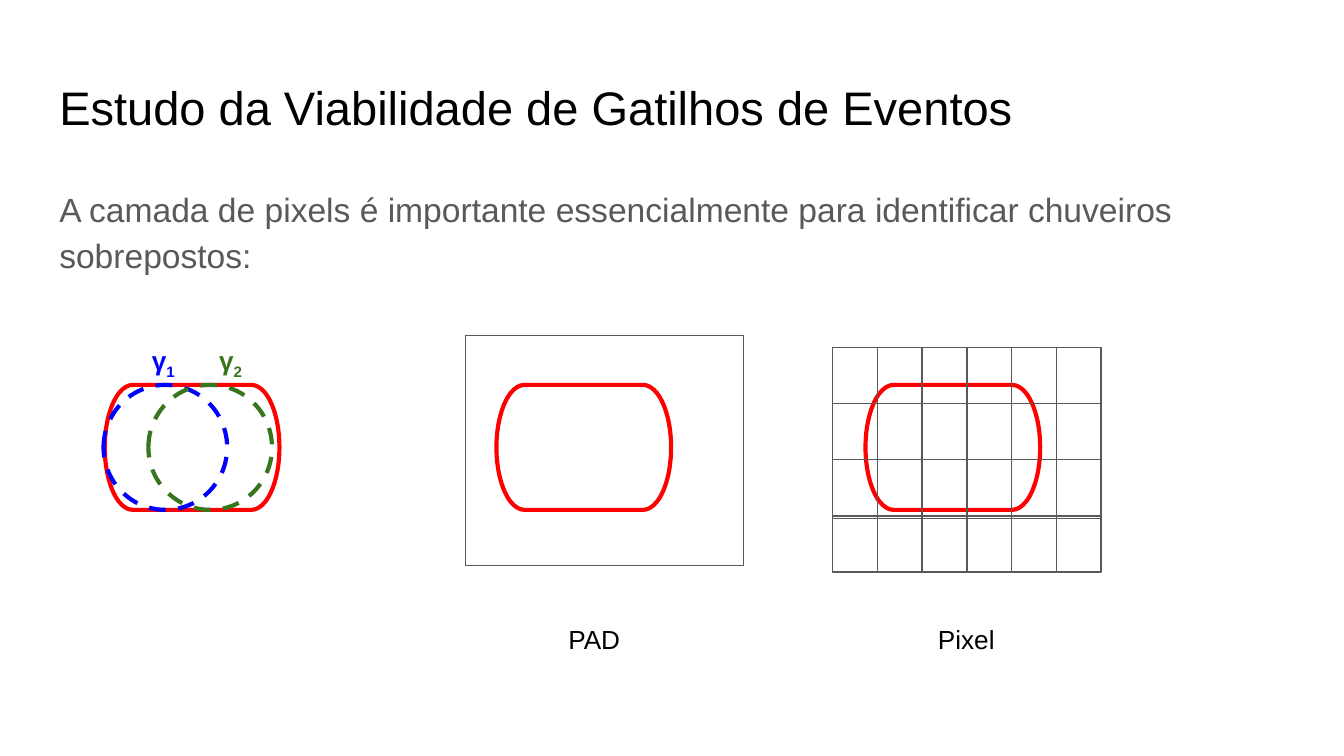
"""Build a slide comparing overlapping showers on pad and pixel layers."""
from itertools import product
from lxml.etree import SubElement
from pptx import Presentation
from pptx.dml.color import RGBColor
from pptx.enum.dml import MSO_LINE as Dash
from pptx.enum.shapes import MSO_SHAPE as Shape
from pptx.enum.text import MSO_ANCHOR as Anchor, MSO_AUTO_SIZE as Fit, PP_ALIGN as Align
from pptx.oxml.ns import qn
from pptx.util import Inches, Pt

THEME = {
    "font": "Arial", "black": "000000", "gray": "595959", "red": "FF0000",
    "blue": "0000FF", "green": "38761D",
    "title": 25.2, "body": 18, "label": 14, "thick": 2.25, "thin": 0.75,
}

deck = Presentation()
deck.slide_width = Inches(10)
deck.slide_height = deck.slide_width * 9 // 16
unit = deck.slide_width / 100
page = deck.slides.add_slide(deck.slide_layouts[1])


def outline(shapes, kind, at, color, width, dash=None):
    """Add an unfilled shape at a position in hundredths of the slide width."""
    shape = shapes.add_shape(kind, *(round(unit * value) for value in at))
    shape.shadow.inherit = False
    shape.fill.background()
    shape.line.color.rgb = RGBColor.from_string(THEME[color])
    shape.line.width = Pt(THEME[width])
    if dash:
        shape.line.dash_style = dash


def write(box, at, text, size, color, bold=False, fit=Fit.SHAPE_TO_FIT_TEXT):
    """Place a text box or placeholder and format its only paragraph."""
    box.left, box.top, box.width, box.height = (round(unit * value) for value in at)
    frame = box.text_frame
    frame.word_wrap, frame.auto_size = True, fit
    frame.vertical_anchor = Anchor.TOP
    frame.margin_left = frame.margin_right = Inches(0.1)
    frame.margin_top = frame.margin_bottom = Inches(0.1)
    para = frame.paragraphs[0]
    para.add_run().text = text
    para.alignment = Align.LEFT
    properties = para._p.get_or_add_pPr()
    properties.set("marL", "0")
    properties.set("indent", "0")
    SubElement(properties, qn("a:buNone"))
    para.space_before = Pt(0)
    para.font.name, para.font.size, para.font.bold = THEME["font"], Pt(THEME[size]), bold
    para.font.color.rgb = RGBColor.from_string(THEME[color])
    return para


write(page.shapes.title, (3.41, 4.87, 93.18, 6.26),
      "Estudo da Viabilidade de Gatilhos de Eventos", "title", "black", fit=Fit.NONE)
body = write(page.placeholders[1], (3.41, 12.6, 93.18, 37.36),
             "A camada de pixels é importante essencialmente para identificar "
             "chuveiros sobrepostos:", "body", "gray", fit=Fit.NONE)
body.line_spacing, body.space_after = 1.15, Pt(12)

shower_top, shower_height = 28.64, 9.3
for left in (7.8, 36.94, 64.4):
    outline(page.shapes, Shape.FLOWCHART_TERMINATOR,
            (left, shower_top, 13, shower_height), "red", "thick")

photons = (("1", 7.7, 10.32, "blue"), ("2", 11.04, 15.32, "green"))
for number, circle_left, label_left, color in photons:
    outline(page.shapes, Shape.OVAL, (circle_left, shower_top, 9.2, shower_height),
            color, "thick", Dash.DASH)
    box = page.shapes.add_textbox(0, 0, 0, 0)
    label = write(box, (label_left, 24.64, 3.9, 4.4), "γ", "label", color, True)
    subscript = label.add_run()
    subscript.text = number
    subscript._r.get_or_add_rPr().set("baseline", "-25000")

outline(page.shapes, Shape.RECTANGLE, (34.62, 24.96, 20.73, 17.1), "gray", "thin")

pixels = page.shapes.add_group_shape()
pixel_width, pixel_height = 3.33, 4.17
row_heights = (pixel_height, pixel_height, 4.38, pixel_height)
for (row, height), column in product(enumerate(row_heights), range(6)):
    outline(pixels.shapes, Shape.RECTANGLE,
            (61.96 + column * pixel_width, 25.87 + row * pixel_height, pixel_width, height),
            "gray", "thin")

for left, caption in ((41.3, "PAD"), (68.8, "Pixel")):
    box = page.shapes.add_textbox(0, 0, 0, 0)
    write(box, (left, 45.4, 6.9, 4.4), caption, "label", "black")

deck.save("out.pptx")
